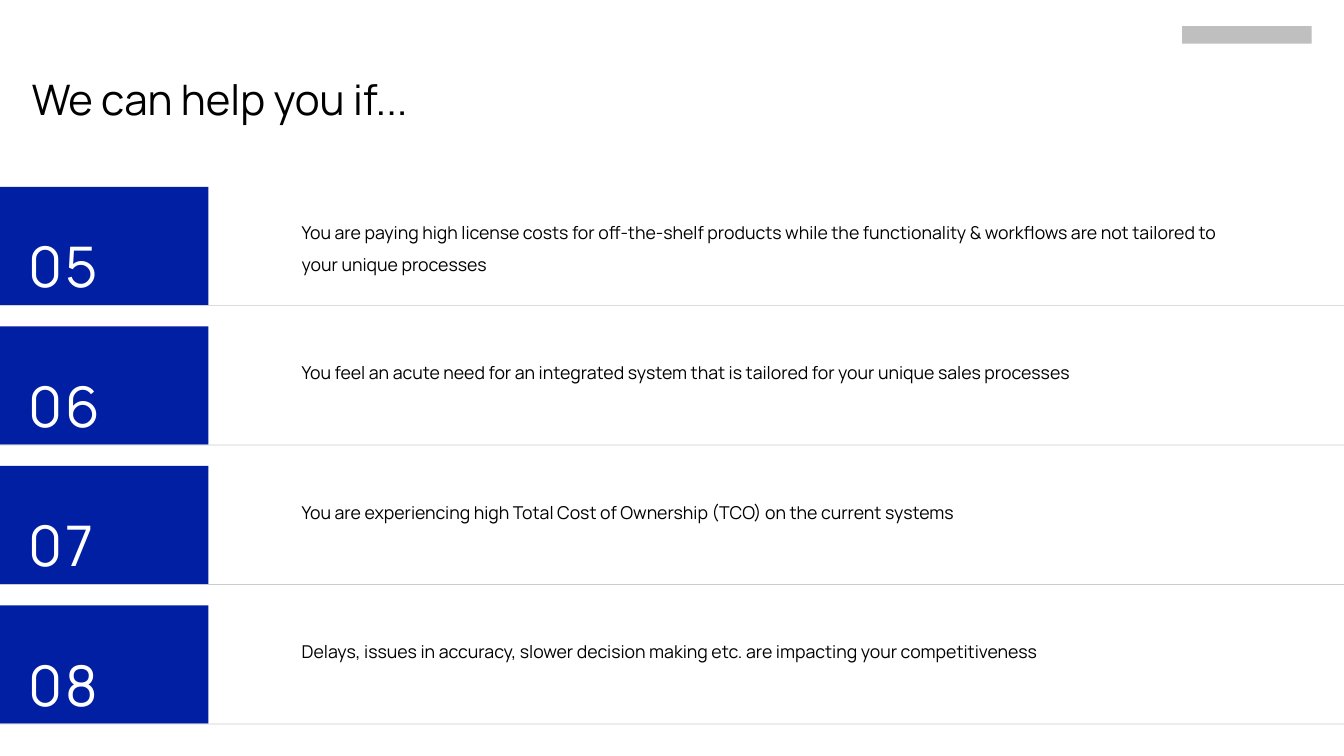
import pptx
import pptx.util
import pptx.dml.color
import pptx.enum.shapes
import pptx.enum.text

Pt = pptx.util.Pt
hues = {"blue": "001FA3", "line": "CCCCCC", "mark": "BFBFBF", "ink": "000000", "white": "FFFFFF"}

deck = pptx.Presentation()
deck.slide_width, deck.slide_height = Pt(1440), Pt(810)
slide = deck.slides.add_slide(deck.slide_layouts[6])


def add_bar(left, top, width, height, hue):
    bar = slide.shapes.add_shape(
        pptx.enum.shapes.MSO_SHAPE.RECTANGLE, Pt(left), Pt(top), Pt(width), Pt(height))
    bar.shadow.inherit = False
    bar.fill.solid()
    bar.fill.fore_color.rgb = pptx.dml.color.RGBColor.from_string(hues[hue])
    bar.line.fill.background()


def add_text(text, left, top, width, height, size, hue="ink", space=None, align=None, track=None):
    box = slide.shapes.add_textbox(Pt(left), Pt(top), Pt(width), Pt(height))
    frame = box.text_frame
    frame.word_wrap = True
    frame.auto_size = pptx.enum.text.MSO_AUTO_SIZE.SHAPE_TO_FIT_TEXT
    frame.margin_left = frame.margin_right = frame.margin_top = frame.margin_bottom = 0
    para = frame.paragraphs[0]
    para.alignment = align
    para.line_spacing = space
    run = para.add_run()
    run.text = text
    run.font.name = "Manrope"
    run.font.size = Pt(size)
    run.font.color.rgb = pptx.dml.color.RGBColor.from_string(hues[hue])
    if track:
        run.font._element.set("spc", str(track))


rows = [
    ("You are paying high license costs for off-the-shelf products while the functionality & workflows are not tailored to your unique processes", 1013.8, 65.5),
    ("You feel an acute need for an integrated system that is tailored for your unique sales processes", 984.2, 31),
    ("You are experiencing high Total Cost of Ownership (TCO) on the current systems", 1028.2, 31),
    ("Delays, issues in accuracy, slower decision making etc. are impacting your competitiveness", 984.2, 31),
]
first, pitch, high = 200.2, 149.5, 126.7

for i in range(len(rows)):
    top = first + i * pitch
    add_bar(0, top, 223.2, high, "blue")
    add_bar(0, top + high, 1440, 0.75, "line")

add_bar(1266.5, 28, 139, 18.7, "mark")
add_text("We can help you if...", 33.8, 79.2, 548, 54.7, 45)
add_text("05 06 07 08", 30.2, 170.6, 85.7, 578.2, 60, hue="white", space=Pt(pitch),
         align=pptx.enum.text.PP_ALIGN.JUSTIFY, track=340)

for i, (text, width, height) in enumerate(rows):
    add_text(text, 323.3, first + 26.5 + i * pitch, width, height, 19, space=1.5)

deck.save("out.pptx")
